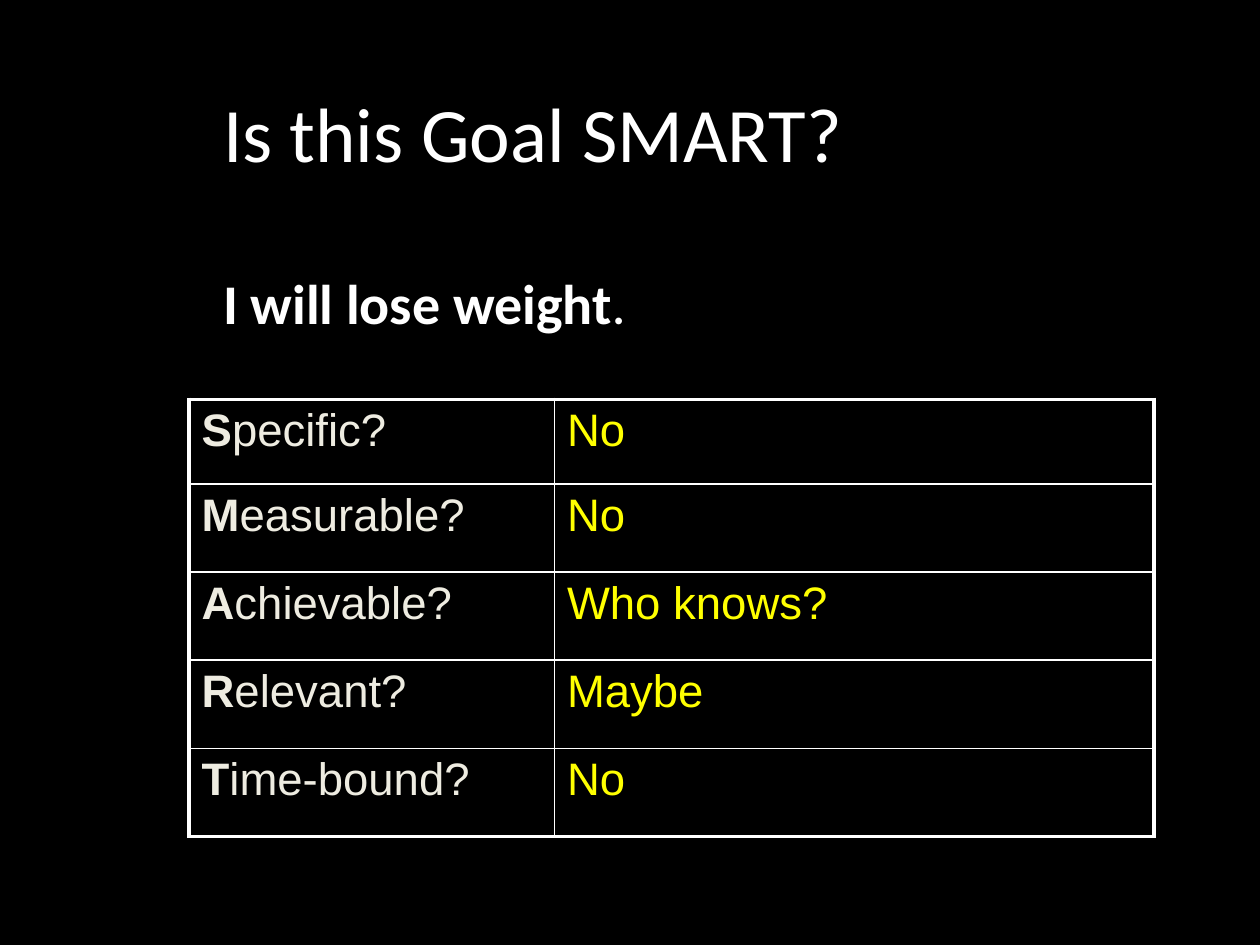
"""Build a slide that checks a goal against the SMART criteria."""
from lxml import etree
from pptx import Presentation
from pptx.dml.color import RGBColor
from pptx.enum.text import MSO_ANCHOR, PP_ALIGN
from pptx.oxml.ns import qn
from pptx.util import Inches, Pt

LEFT = PP_ALIGN.LEFT
TOP, MIDDLE = MSO_ANCHOR.TOP, MSO_ANCHOR.MIDDLE
BLACK, WHITE, CREAM, YELLOW = "000000", "FFFFFF", "EEECE1", "FFFF00"
ANSWERS = [
    ("Specific?", "No"),
    ("Measurable?", "No"),
    ("Achievable?", "Who knows?"),
    ("Relevant?", "Maybe"),
    ("Time-bound?", "No"),
]


def add_run(paragraph, text, size=26, font="Arial", color=WHITE, bold=False):
    run = paragraph.add_run()
    run.text = text
    run.font.size = Pt(size)
    run.font.name = font
    run.font.bold = bold
    run.font.color.rgb = RGBColor.from_string(color)


def add_border(cell, side, width):
    line = etree.Element(qn(f"a:ln{side}"), w=str(Pt(width)))
    fill = etree.SubElement(line, qn("a:solidFill"))
    etree.SubElement(fill, qn("a:srgbClr"), val=WHITE)
    cell._tc.get_or_add_tcPr().append(line)


presentation = Presentation()
presentation.slide_width = Inches(10)
presentation.slide_height = Inches(7.5)
slide = presentation.slides.add_slide(presentation.slide_layouts[1])
slide.background.fill.solid()
slide.background.fill.fore_color.rgb = RGBColor.from_string(BLACK)

title = slide.shapes.title
title.left, title.top = Inches(1.67), Inches(0.21)
title.width, title.height = Inches(7.67), Inches(1.67)
title.text_frame.vertical_anchor = MIDDLE
paragraph = title.text_frame.paragraphs[0]
paragraph.alignment = LEFT
add_run(paragraph, "Is this Goal SMART?", size=44, font="Calibri")

goal = slide.placeholders[1]
goal.left, goal.top = Inches(1.67), Inches(2.08)
goal.width, goal.height = Inches(7.58), Inches(0.75)
goal.text_frame.vertical_anchor = TOP
paragraph = goal.text_frame.paragraphs[0]
etree.SubElement(paragraph._p.get_or_add_pPr(), qn("a:buNone"))
add_run(paragraph, "I will lose weight", size=32, font="Calibri", bold=True)
add_run(paragraph, ".", font="Calibri", bold=True)

table = slide.shapes.add_table(
    len(ANSWERS), 2, Inches(1.5), Inches(3.17), Inches(7.66), Inches(3.47)
).table
table.first_row = False
table.horz_banding = False
for column, width in zip(table.columns, (2.9, 4.76)):
    column.width = Inches(width)

last_row = len(ANSWERS) - 1
for row, (criterion, answer) in enumerate(ANSWERS):
    table.rows[row].height = Inches(0.7 if row else 0.67)
    criterion_cell, answer_cell = table.cell(row, 0), table.cell(row, 1)
    paragraph = criterion_cell.text_frame.paragraphs[0]
    add_run(paragraph, criterion[0], color=CREAM, bold=True)
    add_run(paragraph, criterion[1:], color=CREAM)
    add_run(answer_cell.text_frame.paragraphs[0], answer, color=YELLOW)
    for column, cell in enumerate((criterion_cell, answer_cell)):
        outer_sides = {"L": column == 0, "R": column == 1, "T": row == 0, "B": row == last_row}
        for side, is_outer in outer_sides.items():
            add_border(cell, side, 2.25 if is_outer else 1)
        cell.fill.background()

presentation.save("out.pptx")
